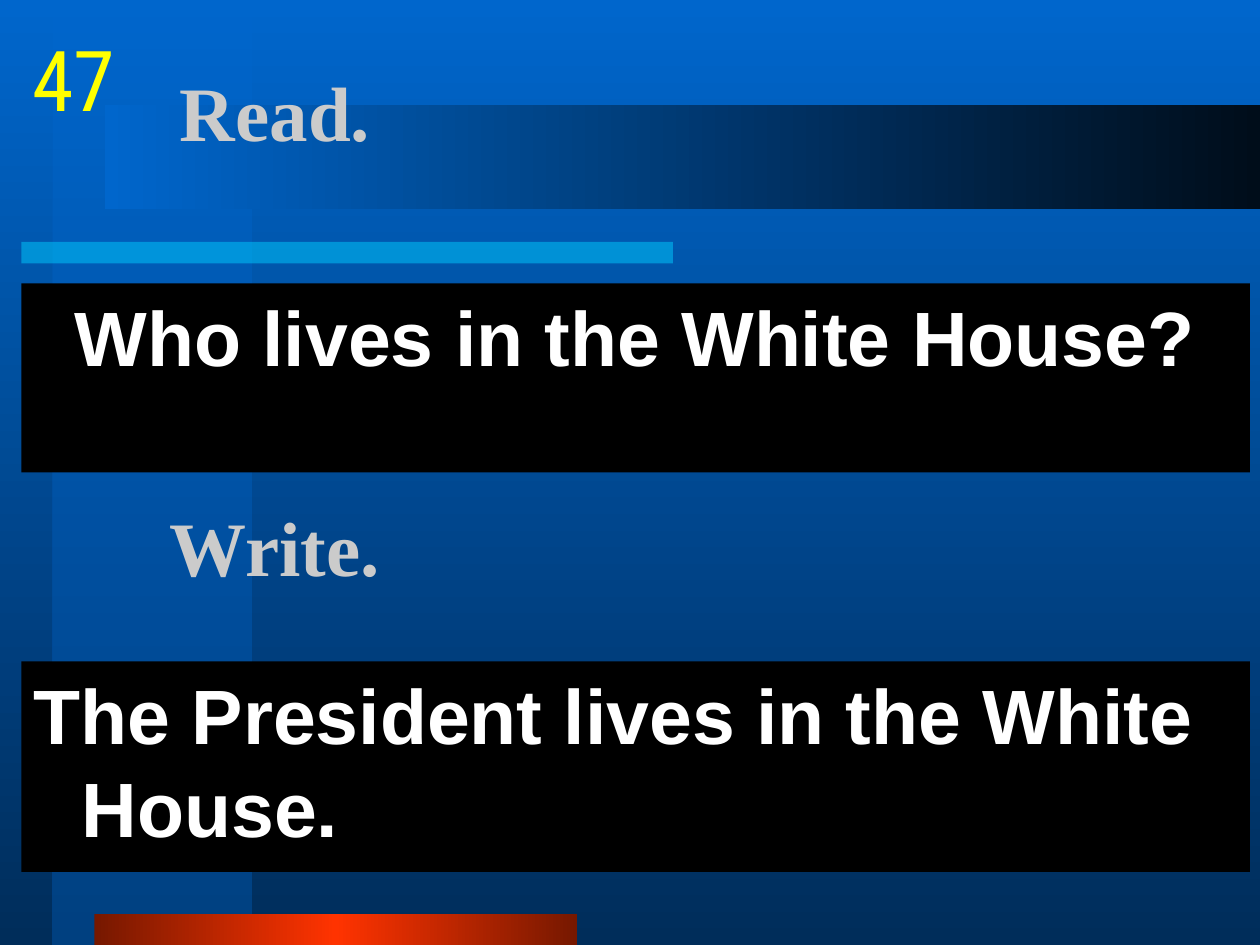
import pptx
import pptx.dml.color
import pptx.enum.shapes
import pptx.enum.text
import pptx.oxml
import pptx.oxml.ns
import pptx.util
from lxml import etree

RGB = pptx.dml.color.RGBColor
Inches = pptx.util.Inches
Pt = pptx.util.Pt
qn = pptx.oxml.ns.qn
ALIGN = pptx.enum.text.PP_ALIGN
ANCHOR = pptx.enum.text.MSO_ANCHOR

BLUE = RGB(0x00, 0x66, 0xCC)
NAVY = RGB(0x00, 0x2D, 0x5A)
MID_BLUE = RGB(0x00, 0x53, 0xA6)
NIGHT = RGB(0x00, 0x0D, 0x1A)
CYAN = RGB(0x00, 0xCC, 0xFF)
RED = RGB(0xFF, 0x33, 0x00)
DARK_RED = RGB(0x76, 0x18, 0x00)
BLACK = RGB(0x00, 0x00, 0x00)
WHITE = RGB(0xFF, 0xFF, 0xFF)
SILVER = RGB(0xCB, 0xCB, 0xCB)
YELLOW = RGB(0xFF, 0xFF, 0x00)

WIDTH, HEIGHT = 10, 7.5
UNIT = WIDTH / 120


def grid(*units):
    return [Inches(round(n * UNIT, 2)) for n in units]


def set_alpha(color, percent):
    etree.SubElement(color, qn("a:alpha")).set("val", str(percent * 1000))


def fill_gradient(fill, owner, colors, angle, alpha=100):
    fill.gradient()
    fill.gradient_angle = angle
    stops = owner.find(".//" + qn("a:gsLst"))
    for stop in list(stops):
        stops.remove(stop)
    for i, color in enumerate(colors):
        stop = etree.SubElement(stops, qn("a:gs"))
        stop.set("pos", str(100000 * i // (len(colors) - 1)))
        clr = etree.SubElement(stop, qn("a:srgbClr"))
        clr.set("val", str(color))
        if alpha < 100:
            set_alpha(clr, alpha)


def add_bar(s, box, colors, angle=0, alpha=100):
    sp = s.shapes.add_shape(pptx.enum.shapes.MSO_SHAPE.RECTANGLE, *grid(*box))
    sp.shadow.inherit = False
    sp.line.fill.background()
    if len(colors) > 1:
        fill_gradient(sp.fill, sp.element, colors, angle, alpha)
    else:
        sp.fill.solid()
        sp.fill.fore_color.rgb = colors[0]
        if alpha < 100:
            set_alpha(sp.element.spPr.find(".//" + qn("a:srgbClr")), alpha)
    return sp


def write(sp, text, font, color, size=44, bold=True, align=ALIGN.LEFT,
          anchor=ANCHOR.MIDDLE, wrap=True, inset=0.1, hanging=0, before=0):
    tf = sp.text_frame
    tf.word_wrap = wrap
    tf.vertical_anchor = anchor
    tf.margin_left = tf.margin_right = Inches(inset)
    p = tf.paragraphs[0]
    p.alignment = align
    p.space_before = Pt(before)
    if hanging:
        pPr = p._p.get_or_add_pPr()
        pPr.set("marL", str(Inches(hanging)))
        pPr.set("indent", str(-Inches(hanging)))
    r = p.add_run()
    r.text = text
    r.font.name = font
    r.font.size = Pt(size)
    r.font.bold = bold
    r.font.color.rgb = color


def add_label(s, box, text, font="Times New Roman", color=SILVER, **style):
    write(s.shapes.add_textbox(*grid(*box)), text, font, color, **style)


def add_panel(s, box, text, align=ALIGN.LEFT):
    write(add_bar(s, box, [BLACK]), text, "Arial", WHITE, align=align,
          anchor=ANCHOR.TOP, hanging=0.38, before=2)


def main():
    prs = pptx.Presentation()
    prs.slide_width, prs.slide_height = Inches(WIDTH), Inches(HEIGHT)
    s = prs.slides.add_slide(prs.slide_layouts[6])
    fill_gradient(s.background.fill, s.element, [BLUE, NAVY], 270)

    add_bar(s, (5, 0, 19, 90), [BLUE, MID_BLUE], 270, 50)
    add_bar(s, (2, 23, 62, 2), [CYAN], alpha=50)
    add_bar(s, (9, 87, 46, 3), [DARK_RED, RED, DARK_RED])
    add_bar(s, (10, 10, 110, 10), [BLUE, NIGHT])

    add_label(s, (16, 3, 102, 15), "Read.")
    add_panel(s, (2, 27, 117, 18), "Who lives in the White House?", ALIGN.CENTER)
    add_label(s, (15, 42, 102, 20), "Write.")
    add_panel(s, (2, 63, 117, 20), "The President lives in the White House.")
    add_label(s, (2, 2, 10, 10), "47", "Roboto Condensed", YELLOW, size=48,
              bold=False, align=ALIGN.CENTER, anchor=ANCHOR.TOP, wrap=False,
              inset=0)

    prs.save("out.pptx")


if __name__ == "__main__":
    main()
